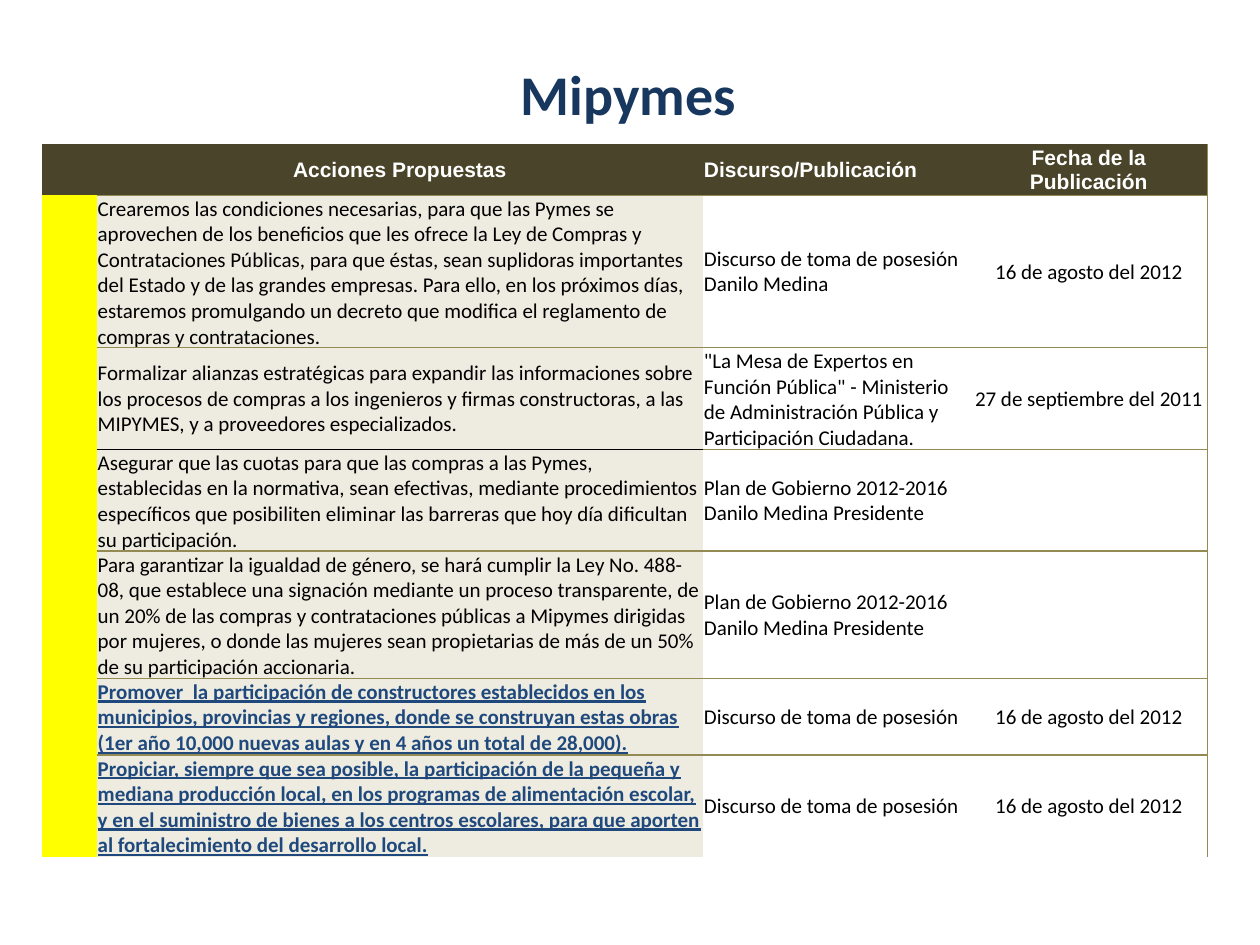
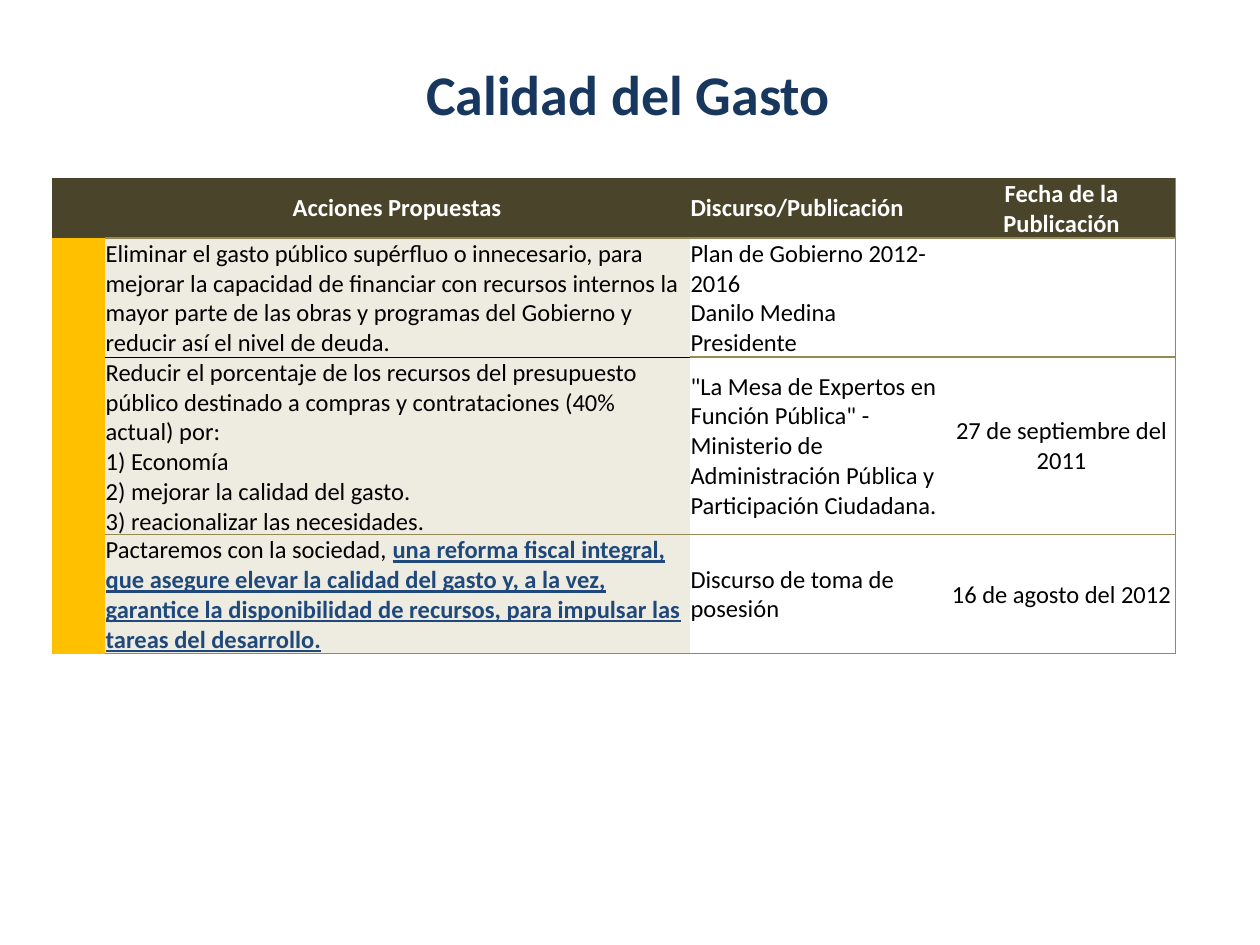
from dataclasses import dataclass

from lxml import etree
from pptx import Presentation
from pptx import util as u
from pptx.dml.color import RGBColor
from pptx.enum import text
from pptx.oxml import ns

# Shared look
COLORS = {
    "title": "17375E",
    "header": "4A452A",
    "header_text": "FFFFFF",
    "action": "EEECE1",
    "plain": "FFFFFF",
    "text": "000000",
    "key": "1F497D",
    "rule": "948B54",
    "thin_rule": "000000",
    "yellow": "FFFF00",
    "amber": "FFC000",
}
BODY_FONT = "Calibri"
NO_TABLE_STYLE = "{2D5ABB26-0587-4C30-8999-92F81FD0307C}"
HEADINGS = ("", "Acciones Propuestas", "Discurso/Publicación", "Fecha de la Publicación")
MARKER, ACTION, SOURCE, DATE = range(4)

# Sources and dates cited on both slides
SPEECH = "Discurso de toma de posesión"
PLAN = "Plan de Gobierno 2012-2016\nDanilo Medina Presidente"
EXPERTS = ('"La Mesa de Expertos en Función Pública" - Ministerio de '
           "Administración Pública y Participación Ciudadana.")
AUGUST = "16 de agosto del 2012"
SEPTEMBER = "27 de septiembre del 2011"


@dataclass
class Proposal:
    height: float
    source: str
    date: str = ""
    action: str = ""
    key: str = ""
    at_bottom: bool = False
    thin_rule_below: bool = False


@dataclass
class Topic:
    title: str
    left: float
    top: float
    columns: tuple[float, ...]
    header_height: float
    header_font: str
    size: int
    marker: str
    closing_rule: bool
    proposals: list[Proposal]


TOPICS = [
    Topic("Mipymes", 0.85, 2.9, (1.1, 12.22, 5.39, 4.78), 1.0, "Arial", 12,
          "yellow", False, [
              Proposal(
                  3.05, SPEECH + "\nDanilo Medina", AUGUST,
                  "Crearemos las condiciones necesarias, para que las Pymes se aprovechen "
                  "de los beneficios que les ofrece la Ley de Compras y Contrataciones "
                  "Públicas, para que éstas, sean suplidoras importantes del Estado y de "
                  "las grandes empresas. Para ello, en los próximos días, estaremos "
                  "promulgando un decreto que modifica el reglamento de compras y "
                  "contrataciones.", at_bottom=True),
              Proposal(
                  2.05, EXPERTS, SEPTEMBER,
                  "Formalizar alianzas estratégicas para expandir las informaciones sobre "
                  "los procesos de compras a los ingenieros y firmas constructoras, a las "
                  "MIPYMES, y a proveedores especializados.", thin_rule_below=True),
              Proposal(
                  2.05, PLAN, "",
                  "Asegurar que las cuotas para que las compras a las Pymes, establecidas "
                  "en la normativa, sean efectivas, mediante procedimientos específicos "
                  "que posibiliten eliminar las barreras que hoy día dificultan su "
                  "participación.", at_bottom=True),
              Proposal(
                  2.55, PLAN, "",
                  "Para garantizar la igualdad de género, se hará cumplir la Ley No. "
                  "488-08, que establece una signación mediante un proceso transparente, "
                  "de un 20% de las compras y contrataciones públicas a Mipymes dirigidas "
                  "por mujeres, o donde las mujeres sean propietarias de más de un 50% de "
                  "su participación accionaria."),
              Proposal(
                  1.55, SPEECH, AUGUST,
                  key="Promover  la participación de constructores establecidos en los "
                      "municipios, provincias y regiones, donde se construyan estas obras "
                      "(1er año 10,000 nuevas aulas y en 4 años un total de 28,000)."),
              Proposal(
                  2.0, SPEECH, AUGUST,
                  key="Propiciar, siempre que sea posible, la participación de la pequeña "
                      "y mediana producción local, en los programas de alimentación "
                      "escolar, y en el suministro de bienes a los centros escolares, "
                      "para que aporten al fortalecimiento del desarrollo local.",
                  at_bottom=True),
          ]),
    Topic("Calidad del Gasto", 1.05, 3.59, (1.06, 11.79, 5.2, 4.6), 1.2, BODY_FONT, 14,
          "amber", True, [
              Proposal(
                  2.4, PLAN, "",
                  "Eliminar el gasto público supérfluo o innecesario, para mejorar la "
                  "capacidad de financiar con recursos internos la mayor parte de las "
                  "obras y programas del Gobierno y reducir así el nivel de deuda.",
                  thin_rule_below=True),
              Proposal(
                  3.56, EXPERTS, SEPTEMBER,
                  "Reducir el porcentaje de los recursos del presupuesto público "
                  "destinado a compras y contrataciones (40% actual) por:\n"
                  "1) Economía\n2) mejorar la calidad del gasto.\n"
                  "3) reacionalizar las necesidades."),
              Proposal(
                  2.4, SPEECH, AUGUST, "Pactaremos con la sociedad, ",
                  "una reforma fiscal integral, que asegure elevar la calidad del gasto "
                  "y, a la vez, garantice la disponibilidad de recursos, para impulsar "
                  "las tareas del desarrollo."),
          ]),
]


def set_font(font, name: str, size: int, color: str, bold: bool = False,
             underline: bool = False) -> None:
    font.name, font.size, font.bold = name, u.Pt(size), bold
    font.underline = underline
    font.color.rgb = RGBColor.from_string(COLORS[color])


def add_title(page, title: str) -> None:
    box = page.shapes.add_textbox(u.Cm(4.95), u.Cm(1.07), u.Cm(15.44), u.Cm(1.63))
    frame = box.text_frame
    frame.word_wrap = True
    frame.auto_size = text.MSO_AUTO_SIZE.SHAPE_TO_FIT_TEXT
    para = frame.paragraphs[0]
    para.text = title
    para.alignment = text.PP_ALIGN.CENTER
    set_font(para.font, BODY_FONT, 32, "title", bold=True)


def add_border(cell, side: str, color: str, width: float) -> None:
    line = etree.SubElement(cell._tc.get_or_add_tcPr(), ns.qn(f"a:ln{side}"),
                            w=str(u.Pt(width)))
    fill = etree.SubElement(line, ns.qn("a:solidFill"))
    etree.SubElement(fill, ns.qn("a:srgbClr"), val=COLORS[color])


def rule_under(topic: Topic, row: int, column: int) -> tuple[str, float] | None:
    """Colour and width of the rule below a row; row 0 is the header."""
    if column == MARKER or (row == len(topic.proposals) and not topic.closing_rule):
        return None
    if column == ACTION and row and topic.proposals[row - 1].thin_rule_below:
        return "thin_rule", 0.5
    return "rule", 1


def format_cell(cell, topic: Topic, row: int, column: int) -> None:
    # Borders come before the fill in the cell properties
    if column == DATE:
        add_border(cell, "R", "rule", 1)
    above = rule_under(topic, row - 1, column) if row else None
    for side, rule in (("T", above), ("B", rule_under(topic, row, column))):
        if rule:
            add_border(cell, side, *rule)
    fills = (topic.marker, "action", "plain", "plain")
    cell.fill.solid()
    cell.fill.fore_color.rgb = RGBColor.from_string(
        COLORS[fills[column] if row else "header"])
    cell.margin_left = cell.margin_right = cell.margin_top = u.Cm(0.02)
    cell.margin_bottom = 0
    cell.vertical_anchor = text.MSO_ANCHOR.MIDDLE
    para = cell.text_frame.paragraphs[0]
    centered = column == DATE or (row == 0 and column == ACTION)
    para.alignment = text.PP_ALIGN.CENTER if centered else text.PP_ALIGN.LEFT


def write_action(cell, proposal: Proposal, size: int) -> None:
    if proposal.at_bottom:
        cell.vertical_anchor = text.MSO_ANCHOR.BOTTOM
    para = cell.text_frame.paragraphs[0]
    para.text = proposal.action.replace("\n", "\v")
    set_font(para.font, BODY_FONT, size, "text")
    if proposal.key:
        span = para.add_run()
        span.text = proposal.key
        font = span.font if proposal.action else para.font
        set_font(font, BODY_FONT, size, "key", bold=True, underline=True)


def write_plain(cell, words: str, name: str, size: int, color: str, bold: bool) -> None:
    para = cell.text_frame.paragraphs[0]
    para.text = words.replace("\n", "\v")
    set_font(para.font, name, size, color, bold)


def add_proposal_table(page, topic: Topic) -> None:
    heights = [topic.header_height] + [item.height for item in topic.proposals]
    frame = page.shapes.add_table(
        len(heights), len(topic.columns), u.Cm(topic.left), u.Cm(topic.top),
        u.Cm(sum(topic.columns)), u.Cm(sum(heights)))
    table = frame.table
    table.first_row = table.horz_banding = False
    table._tbl.tblPr.find(ns.qn("a:tableStyleId")).text = NO_TABLE_STYLE
    for column, width in zip(table.columns, topic.columns):
        column.width = u.Cm(width)
    for row, height in zip(table.rows, heights):
        row.height = u.Cm(height)

    for row in range(len(heights)):
        for column in range(len(topic.columns)):
            format_cell(table.cell(row, column), topic, row, column)

    # Header, then one row per proposal
    for column, heading in enumerate(HEADINGS):
        write_plain(table.cell(0, column), heading, topic.header_font, topic.size,
                    "header_text", True)
    for row, proposal in enumerate(topic.proposals, 1):
        write_action(table.cell(row, ACTION), proposal, topic.size)
        for column, words in ((SOURCE, proposal.source), (DATE, proposal.date)):
            write_plain(table.cell(row, column), words, BODY_FONT, topic.size, "text", False)


def main() -> None:
    deck = Presentation()
    deck.slide_width, deck.slide_height = u.Cm(25.4), u.Cm(19.05)
    for topic in TOPICS:
        page = deck.slides.add_slide(deck.slide_layouts[6])
        add_title(page, topic.title)
        add_proposal_table(page, topic)
    deck.save("out.pptx")


if __name__ == "__main__":
    main()
